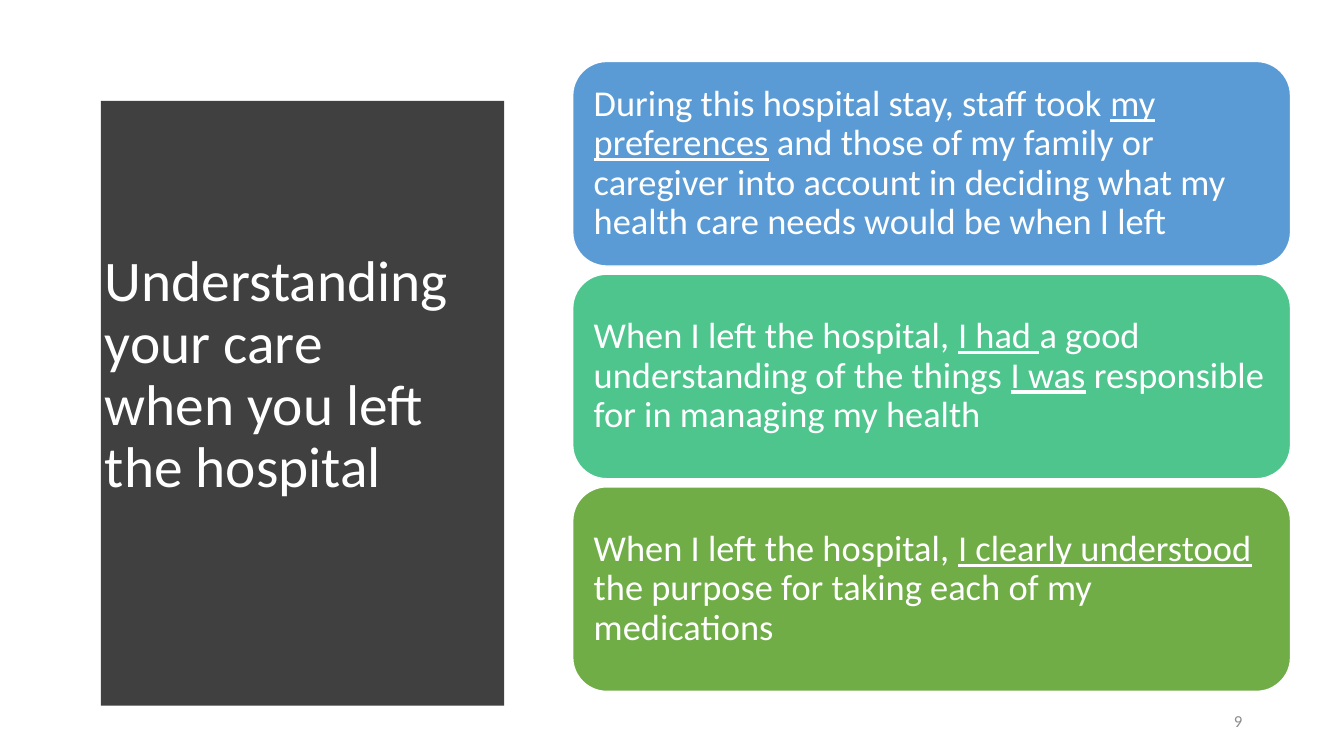
from pptx import Presentation
from pptx.dml.color import RGBColor
from pptx.enum.shapes import MSO_SHAPE as Preset
from pptx.enum.text import MSO_ANCHOR as Anchor, MSO_AUTO_SIZE as AutoSize, PP_ALIGN as Align
from pptx.util import Inches, Pt

WHITE = RGBColor(0xFF, 0xFF, 0xFF)
CHARCOAL = RGBColor(0x40, 0x40, 0x40)
GREY = RGBColor(0x8C, 0x8C, 0x8C)
BLUE = RGBColor(0x5B, 0x9B, 0xD5)
TEAL = RGBColor(0x4D, 0xC5, 0x8D)
GREEN = RGBColor(0x70, 0xAD, 0x47)
FONT = "Calibri"

HEADING = "Understanding your care when you left the hospital"
# Each statement is a card colour and its (text, underlined) pieces.
STATEMENTS = [
    (BLUE, [("During this hospital stay, staff took ", False), ("my", True), (" ", True),
            ("preferences", True),
            (" and those of my family or caregiver into account in deciding "
             "what my health care needs would be when I left", False)]),
    (TEAL, [("When I left the hospital, ", False), ("I had ", True),
            ("a good understanding of the things ", False), ("I was", True),
            (" responsible for in managing my health", False)]),
    (GREEN, [("When I left the hospital, ", False), ("I clearly understood", True),
             (" the purpose for taking each of my medications", False)]),
]
STATEMENTS[0][1][2] = (" ", False)


def write(paragraph, pieces, size, color):
    for text, underlined in pieces:
        run = paragraph.add_run()
        run.text = text
        for name, value in dict(name=FONT, size=Pt(size), underline=underlined).items():
            setattr(run.font, name, value)
        run.font.color.rgb = color


def add_heading_panel(slide, left, top, width, height, bulge=0.24, steps=40):
    """Dark panel whose right edge bows outwards, with the title over it."""
    middle = top + height / 2
    edge = []
    for step in range(steps + 1):
        y = top + height * step / steps
        bend = ((y - middle) / (height / 2)) ** 2
        edge.append((left + width - bulge * bend, y))
    outline = slide.shapes.build_freeform(left, top, scale=Inches(1))
    outline.add_line_segments(edge + [(left, top + height)], close=True)
    panel = outline.convert_to_shape()
    panel.shadow.inherit = False
    panel.fill.solid()
    panel.fill.fore_color.rgb = CHARCOAL
    panel.line.fill.background()

    title = slide.shapes.title
    title.element.addprevious(panel.element)
    title.left, title.top = Inches(left + 0.41), Inches(top + 0.59)
    title.width, title.height = Inches(width - 1.05), Inches(height - 1.2)
    frame = title.text_frame
    frame.auto_size, frame.word_wrap = AutoSize.NONE, True
    frame.vertical_anchor = Anchor.MIDDLE
    heading = frame.paragraphs[0]
    heading.alignment, heading.line_spacing = Align.LEFT, 0.9
    write(heading, [(HEADING, False)], 41, WHITE)


def add_statement_cards(slide, left, top, width, height, gap=0.08):
    card_height = (height - gap * (len(STATEMENTS) - 1)) / len(STATEMENTS)
    for row, (color, pieces) in enumerate(STATEMENTS):
        card = slide.shapes.add_shape(
            Preset.ROUNDED_RECTANGLE, Inches(left), Inches(top + row * (card_height + gap)),
            Inches(width), Inches(card_height))
        card.shadow.inherit = False
        card.fill.solid()
        card.fill.fore_color.rgb = color
        card.line.color.rgb = WHITE
        card.line.width = Pt(1)
        frame = card.text_frame
        frame.word_wrap, frame.vertical_anchor = True, Anchor.MIDDLE
        for side in ("left", "top", "right", "bottom"):
            setattr(frame, f"margin_{side}", Inches(0.11))
        statement = frame.paragraphs[0]
        statement.alignment, statement.line_spacing = Align.LEFT, 0.9
        write(statement, pieces, 26, WHITE)


def add_page_number(slide, left, top, width, height):
    box = slide.shapes.add_textbox(Inches(left), Inches(top), Inches(width), Inches(height))
    frame = box.text_frame
    frame.word_wrap, frame.vertical_anchor = True, Anchor.MIDDLE
    number = frame.paragraphs[0]
    number.alignment, number.space_after = Align.RIGHT, Pt(6)
    write(number, [("9", False)], 12, GREY)


def main():
    deck = Presentation()
    deck.slide_width, deck.slide_height = Inches(13.33), Inches(7.5)
    slide = deck.slides.add_slide(deck.slide_layouts.get_by_name("Title Only"))
    add_heading_panel(slide, 0.53, 0.52, 4.79, 6.44)
    add_page_number(slide, 11.73, 6.95, 0.69, 0.4)
    add_statement_cards(slide, 5.68, 0.61, 7.12, 6.25)
    deck.save("out.pptx")


if __name__ == "__main__":
    main()
